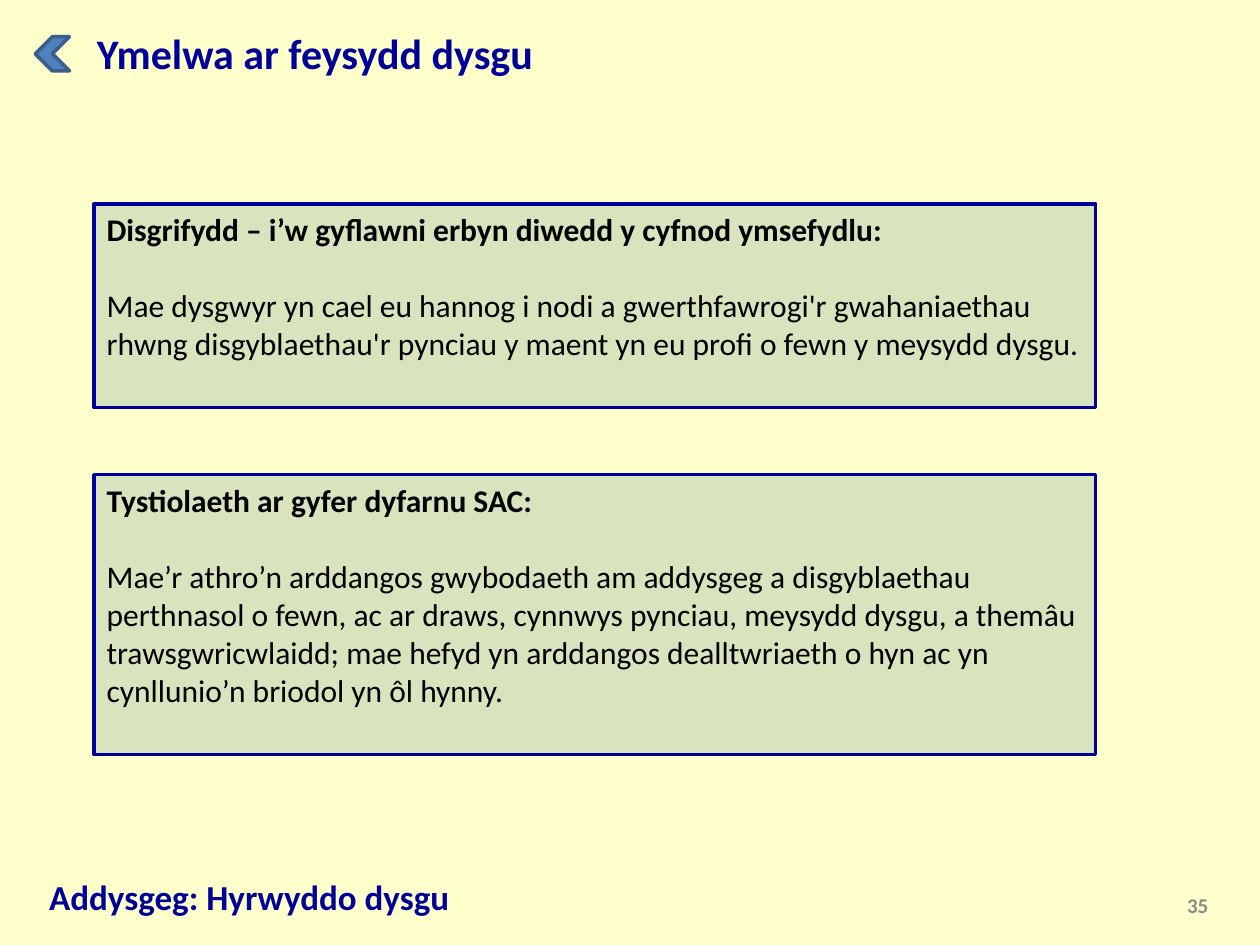
from pptx import Presentation
from pptx.dml.color import RGBColor
from pptx.enum.shapes import MSO_SHAPE as SHAPE
from pptx.enum.text import MSO_ANCHOR as ANCHOR, MSO_AUTO_SIZE as AUTO, PP_ALIGN as ALIGN
from pptx.util import Cm, Pt

COLORS = {
    "background": "FFFFCC",
    "navy": "000099",
    "panel": "D7E4BD",
    "text": "000000",
    "chevron": "4F81BD",
    "chevron_line": "3A5F8C",
    "number": "8C8C8C",
}
PANEL_LEFT, PANEL_WIDTH = 1.9, 20.19
PANELS = [
    (4.11, 4.11, "Disgrifydd – i’w gyflawni erbyn diwedd y cyfnod ymsefydlu:",
     "Mae dysgwyr yn cael eu hannog i nodi a gwerthfawrogi'r gwahaniaethau rhwng "
     "disgyblaethau'r pynciau y maent yn eu profi o fewn y meysydd dysgu."),
    (9.57, 5.64, "Tystiolaeth ar gyfer dyfarnu SAC:",
     "Mae’r athro’n arddangos gwybodaeth am addysgeg a disgyblaethau perthnasol o fewn, "
     "ac ar draws, cynnwys pynciau, meysydd dysgu, a themâu trawsgwricwlaidd; mae hefyd "
     "yn arddangos dealltwriaeth o hyn ac yn cynllunio’n briodol yn ôl hynny."),
]


def rgb(name):
    return RGBColor.from_string(COLORS[name])


def write(p, text, size=18, color="text", bold=True, align=ALIGN.LEFT, before=0):
    p.alignment = align
    p.space_before = Pt(before)
    r = p.add_run()
    r.text = text
    r.font.name = "Calibri"
    r.font.size = Pt(size)
    r.font.bold = bold
    r.font.color.rgb = rgb(color)


def frame(sp, anchor=ANCHOR.TOP):
    tf = sp.text_frame
    tf.word_wrap = True
    tf.auto_size = AUTO.NONE
    tf.vertical_anchor = anchor
    return tf


def add_title(s, text, left, top, width, height):
    sp = s.shapes.title
    sp.left, sp.top, sp.width, sp.height = Cm(left), Cm(top), Cm(width), Cm(height)
    write(frame(sp).paragraphs[0], text, size=24, color="navy")


def add_label(s, text, left, top, width, height, anchor=ANCHOR.TOP, **fmt):
    sp = s.shapes.add_textbox(Cm(left), Cm(top), Cm(width), Cm(height))
    write(frame(sp, anchor).paragraphs[0], text, **fmt)


def add_shape(s, kind, left, top, width, height, fill, line):
    sp = s.shapes.add_shape(kind, Cm(left), Cm(top), Cm(width), Cm(height))
    sp.shadow.inherit = False
    sp.fill.solid()
    sp.fill.fore_color.rgb = rgb(fill)
    sp.line.color.rgb = rgb(line)
    sp.line.width = Pt(2)
    return sp


def add_panel(s, top, height, heading, body):
    sp = add_shape(s, SHAPE.RECTANGLE, PANEL_LEFT, top, PANEL_WIDTH, height, "panel", "navy")
    tf = frame(sp)
    write(tf.paragraphs[0], heading)
    write(tf.add_paragraph(), body, bold=False, before=22)


def main():
    prs = Presentation()
    prs.slide_width, prs.slide_height = Cm(25.4), Cm(19.05)
    s = prs.slides.add_slide(prs.slide_layouts[5])
    s.background.fill.solid()
    s.background.fill.fore_color.rgb = rgb("background")

    add_title(s, "Ymelwa ar feysydd dysgu", 1.7, 0.43, 12.6, 1.27)
    chevron = add_shape(s, SHAPE.CHEVRON, 0.71, 0.74, 0.69, 0.69, "chevron", "chevron_line")
    chevron.rotation = 180
    for panel in PANELS:
        add_panel(s, *panel)
    add_label(s, "Addysgeg: Hyrwyddo dysgu", 0.74, 17.53, 22.91, 1.12, size=20, color="navy")
    add_label(s, "35", 18.69, 17.73, 5.92, 1.02, anchor=ANCHOR.MIDDLE,
              size=12, color="number", align=ALIGN.RIGHT)
    prs.save("out.pptx")


if __name__ == "__main__":
    main()
